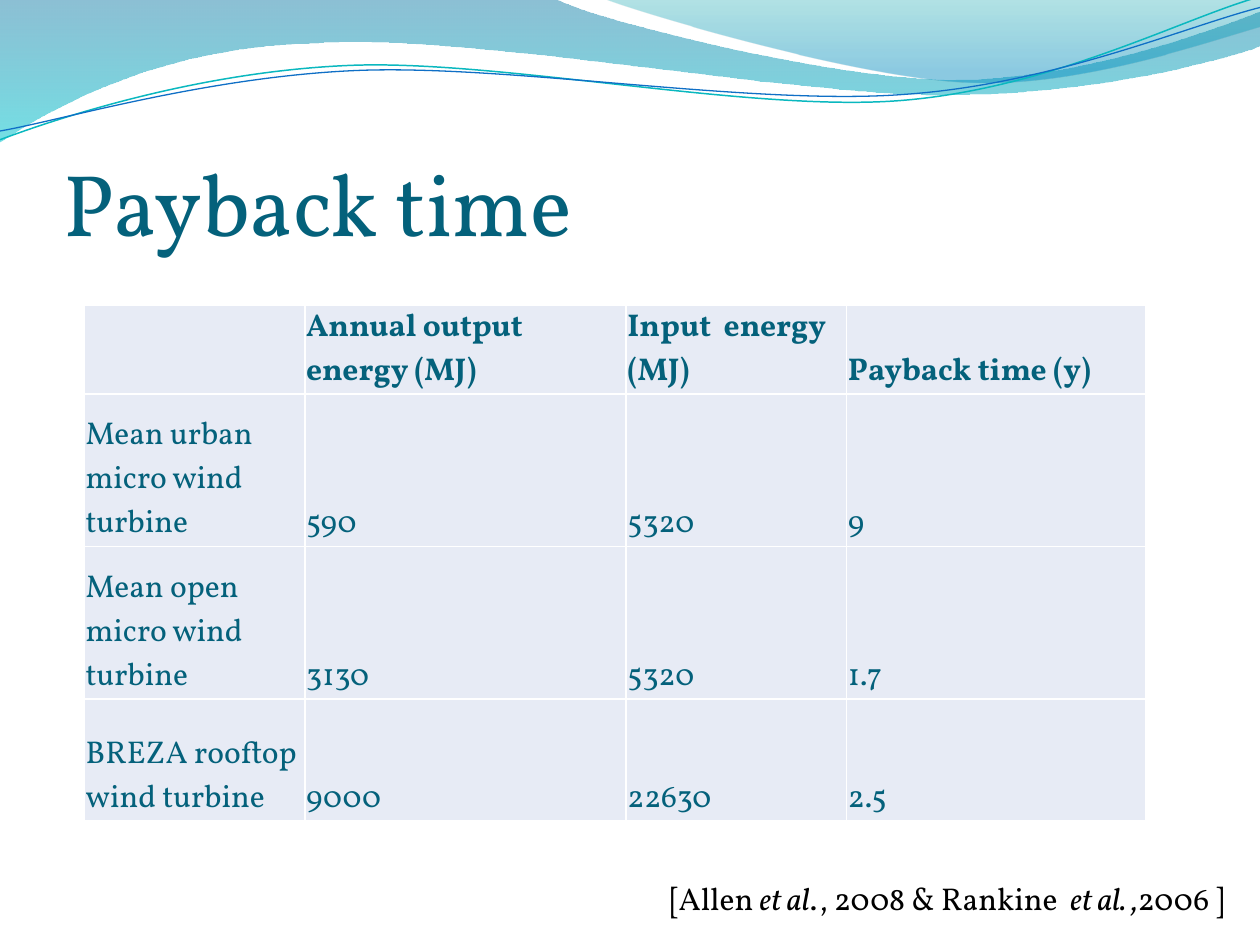
from dataclasses import dataclass
from math import cos, radians, sin

from lxml.etree import SubElement
from pptx import Presentation
from pptx.dml.color import RGBColor
from pptx.enum.text import MSO_ANCHOR, MSO_AUTO_SIZE, PP_ALIGN
from pptx.oxml.ns import qn
from pptx.util import Inches, Pt

COLS, ROWS = 10, 7.5  # slide grid: one unit is one inch
TILT = -2.7           # rotation of the thin lines, in degrees


@dataclass(frozen=True)
class Theme:
    font: str = "Vollkorn"
    heading: str = "04617B"
    text: str = "000000"
    cell: str = "E7EBF5"
    rule: str = "FFFFFF"
    title_size: float = 50
    body_size: float = 18
    # wave gradients: colour, position, opacity in percent
    wave_back: tuple = (("0074A1", 0, 45), ("00C6CF", 1, 55))
    wave_front: tuple = (("00A1A9", 0, 30), ("008BBF", 0.8, 45))
    line_teal: str = "0AB8BF"
    line_blue: str = "0F6FC6"


T = Theme()

# Each outline is a start point, then straight (2 numbers) or curved (6) steps
BACK_WAVE = [(0, 0), (4.4, -0.01),
             (4.76, 0.17, 6.64, 0.63, 7.58, 0.63),
             (8.53, 0.63, 9.58, 0.26, 10, 0.09), (10.01, 0.36),
             (9.83, 0.44, 8.7, 0.76, 7.46, 0.75),
             (6.22, 0.75, 3.82, 0.28, 2.57, 0.34),
             (1.29, 0.36, 0.46, 0.83, -0.01, 1.13)]
FRONT_WAVE = [(4.79, -0.01), (5.09, 0.11, 6.82, 0.62, 7.69, 0.65),
              (8.56, 0.69, 9.61, 0.32, 10, 0.21), (10, 0)]
TEAL_LINE = [(0, 1.11), (0.48, 0.93, 1.58, 0.57, 2.77, 0.52),
             (3.95, 0.47, 5.93, 0.89, 7.13, 0.8),
             (8.33, 0.71, 9.38, 0.15, 9.98, -0.02)]
BLUE_LINE = [(0, 1.04), (0.47, 0.96, 1.64, 0.61, 2.83, 0.56),
             (4.03, 0.51, 5.97, 0.84, 7.17, 0.75),
             (8.36, 0.67, 9.41, 0.21, 10, 0.06)]

TABLE = [["", "Annual output  energy (MJ)", "Input  energy (MJ)", "Payback time (y)"],
         ["Mean urban micro wind turbine", "590", "5320", "9"],
         ["Mean open micro wind turbine", "3130", "5320", "1.7"],
         ["BREZA rooftop wind turbine", "9000", "22630", "2.5"]]
COL_WIDTHS = [1.75, 2.55, 1.75, 2.37]
ROW_HEIGHTS = [0.49, 1.21, 1.21, 0.97]

CITATION = [("[Allen ", False), ("et al", True), ("., 2008 & Rankine  ", False),
            ("et al. ,", True), ("2006 ]", False)]


def rgb(value):
    return RGBColor.from_string(value)


def set_font(font, size, color, bold=False):
    font.name, font.size, font.bold = T.font, Pt(size), bold
    font.color.rgb = rgb(color)


def set_insets(target, left, top, right, bottom):
    target.margin_left, target.margin_top = Inches(left), Inches(top)
    target.margin_right, target.margin_bottom = Inches(right), Inches(bottom)


def turn(point, center, degrees):
    dx, dy = point[0] - center[0], point[1] - center[1]
    c, n = cos(radians(degrees)), sin(radians(degrees))
    return center[0] + dx * c - dy * n, center[1] + dx * n + dy * c


def add_outline(s, box, outline, close, tilt=0):
    left, top, width, height = box
    center = (left + width / 2, top + height / 2)
    pts = [turn((left + step[i], top + step[i + 1]), center, -tilt)
           for step in outline for i in range(0, len(step), 2)]
    pts = [(Inches(x), Inches(y)) for x, y in pts]
    fb = s.shapes.build_freeform(*pts[0])
    fb.add_line_segments(pts[1:], close=close)
    sp = fb.convert_to_shape()
    sp.shadow.inherit = False
    # Join the three points of each curved step into one Bézier segment
    segments = iter(list(sp._element.iter(qn("a:lnTo"))))
    for step in outline[1:]:
        seg = next(segments)
        if len(step) == 6:
            seg.tag = qn("a:cubicBezTo")
            for extra in (next(segments), next(segments)):
                seg.append(extra[0])
                extra.getparent().remove(extra)
    sp.rotation = tilt
    return sp


def add_waves(s, box):
    # Translucent gradient bands
    for outline, stops in ((BACK_WAVE, T.wave_back), (FRONT_WAVE, T.wave_front)):
        sp = add_outline(s, box, outline, True)
        sp.line.fill.background()
        sp.fill.gradient()
        sp.fill.gradient_angle = 270
        for stop, (color, position, _) in zip(sp.fill.gradient_stops, stops):
            stop.color.rgb, stop.position = rgb(color), position
        colors = list(sp._element.spPr.iter(qn("a:srgbClr")))
        for clr, (_, _, opacity) in zip(colors, stops):
            SubElement(clr, qn("a:alpha"), val=str(opacity * 1000))
    # Thin tilted lines
    for outline, color, width in ((TEAL_LINE, T.line_teal, 0.85),
                                  (BLUE_LINE, T.line_blue, 0.75)):
        sp = add_outline(s, box, outline, False, TILT)
        sp.fill.background()
        sp.line.color.rgb, sp.line.width = rgb(color), Pt(width)


def add_title(s, box, text):
    sp = s.shapes.title
    sp.left, sp.top, sp.width, sp.height = map(Inches, box)
    s.shapes._spTree.append(sp._element)  # in front of the waves
    tf = sp.text_frame
    tf.text, tf.word_wrap = text, True
    tf.auto_size, tf.vertical_anchor = MSO_AUTO_SIZE.NONE, MSO_ANCHOR.BOTTOM
    set_insets(tf, 0, 0.05, 0, 0)
    p = tf.paragraphs[0]
    p.alignment = PP_ALIGN.LEFT
    set_font(p.font, T.title_size, T.heading)


def format_cell(cell, text, bold):
    tcPr = cell._tc.get_or_add_tcPr()
    for side in ("lnL", "lnR", "lnT", "lnB"):
        ln = SubElement(tcPr, qn("a:" + side), w=str(Pt(1)))
        SubElement(SubElement(ln, qn("a:solidFill")), qn("a:srgbClr"), val=T.rule)
    cell.fill.solid()
    cell.fill.fore_color.rgb = rgb(T.cell)
    cell.vertical_anchor = MSO_ANCHOR.BOTTOM
    set_insets(cell, 0.01, 0.01, 0.01, 0)
    cell.text = text
    set_font(cell.text_frame.paragraphs[0].font, T.body_size, T.heading, bold)


def add_payback_table(s, box):
    tbl = s.shapes.add_table(len(TABLE), len(TABLE[0]), *map(Inches, box)).table
    tbl.first_row = tbl.horz_banding = False
    for col, width in zip(tbl.columns, COL_WIDTHS):
        col.width = Inches(width)
    for r, (row, height) in enumerate(zip(TABLE, ROW_HEIGHTS)):
        tbl.rows[r].height = Inches(height)
        for c, text in enumerate(row):
            format_cell(tbl.cell(r, c), text, bold=r == 0)


def add_citation(s, box):
    tf = s.shapes.add_textbox(*map(Inches, box)).text_frame
    tf.word_wrap, tf.auto_size = False, MSO_AUTO_SIZE.SHAPE_TO_FIT_TEXT
    p = tf.paragraphs[0]
    set_font(p.font, T.body_size, T.text)
    for text, italic in CITATION:
        r = p.add_run()
        r.text, r.font.italic = text, italic


def main():
    prs = Presentation()
    prs.slide_width, prs.slide_height = Inches(COLS), Inches(ROWS)
    s = prs.slides.add_slide(prs.slide_layouts[5])
    add_waves(s, (0, 0, COLS, 1.14))
    add_title(s, (0.5, 0.77, COLS - 1, 1.25), "Payback time")
    add_payback_table(s, (0.67, 2.42, sum(COL_WIDTHS), sum(ROW_HEIGHTS)))
    add_citation(s, (5.22, 6.93, 4.77, 0.4))
    prs.save("out.pptx")


if __name__ == "__main__":
    main()
